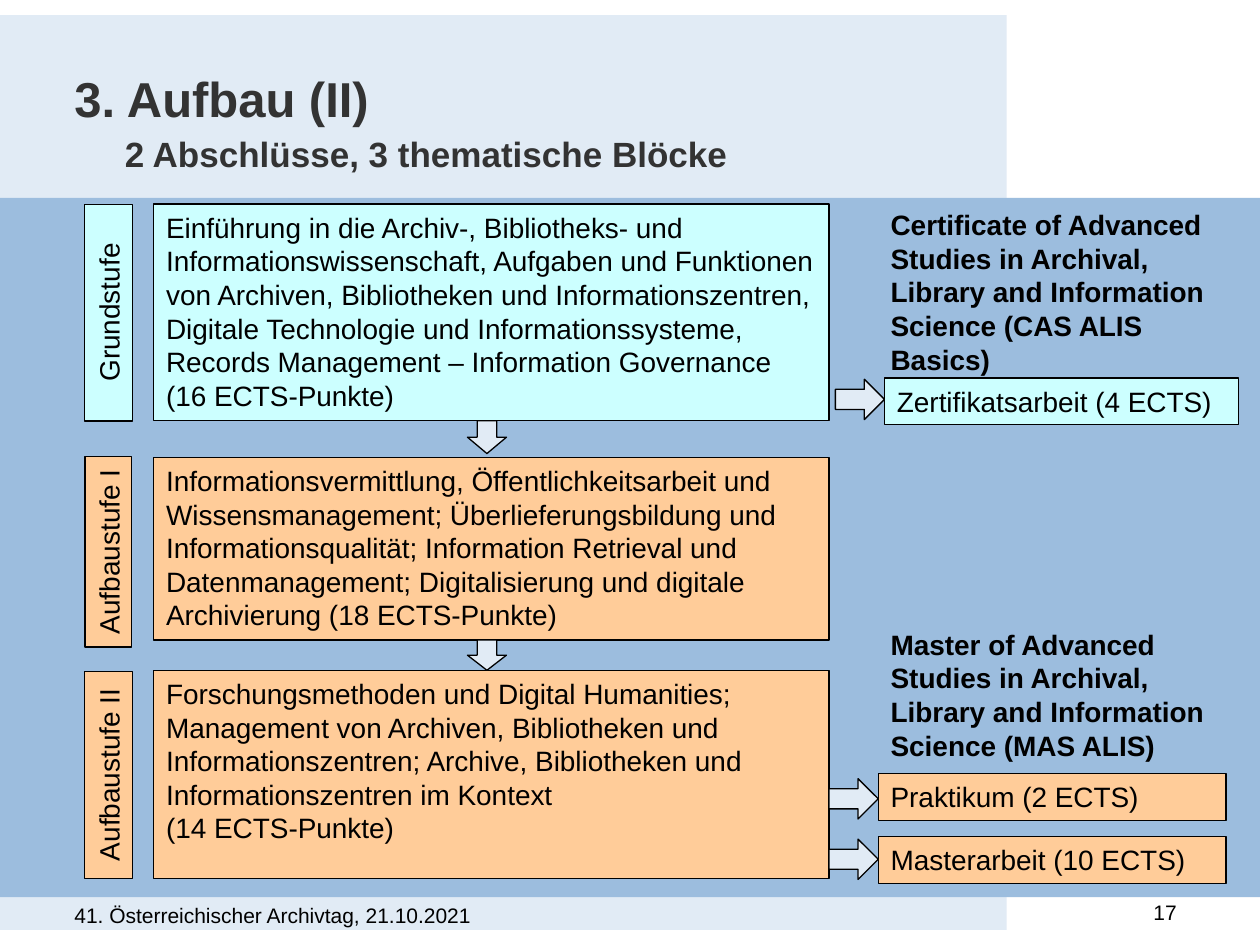
from lxml import etree
from pptx import Presentation
from pptx import util as u
from pptx.dml.color import RGBColor
from pptx.enum import shapes, text

BAND, PANEL = "E1EBF5", "9CBDDE"
BASIC, ADVANCED = "CCFFFF", "FFCC99"
BLACK, TITLE_GREY = "000000", "333333"
INSETS = (0.1, 0.05)
BLOCK_LEFT, BLOCK_WIDTH = 1.22, 5.36
LABEL_CENTRE = 0.86
LEFT, CENTRE, RIGHT = (text.PP_ALIGN.LEFT, text.PP_ALIGN.CENTER,
                       text.PP_ALIGN.RIGHT)

# Fill, label, label centre and size, block top and height, block paragraphs
STAGES = [
    (BASIC, "Grundstufe", 2.48, 1.72, 0.38, 1.62, 1.72, [
        "Einführung in die Archiv-, Bibliotheks- und",
        "Informationswissenschaft, Aufgaben und Funktionen von Archiven, "
        "Bibliotheken und Informationszentren, Digitale Technologie und "
        "Informationssysteme, Records Management – Information Governance",
        "(16 ECTS-Punkte)"]),
    (ADVANCED, "Aufbaustufe I", 4.38, 1.51, 0.37, 3.63, 1.45, [
        "Informationsvermittlung, Öffentlichkeitsarbeit und Wissensmanagement; "
        "Überlieferungsbildung und Informationsqualität; "
        "Information Retrieval und",
        "Datenmanagement; Digitalisierung und digitale Archivierung "
        "(18 ECTS-Punkte)"]),
    (ADVANCED, "Aufbaustufe II", 6.15, 1.64, 0.38, 5.32, 1.65, [
        "Forschungsmethoden und Digital Humanities; Management von Archiven, "
        "Bibliotheken und Informationszentren; Archive, Bibliotheken und "
        "Informationszentren im Kontext",
        "(14 ECTS-Punkte)"]),
]

# Top, height, text
DEGREES = [
    (1.6, 1.72, "Certificate of Advanced Studies in Archival, Library and "
                "Information Science (CAS ALIS Basics)"),
    (4.93, 1.18, "Master of Advanced Studies in Archival, Library and "
                 "Information Science (MAS ALIS)"),
]

# Left, top, width, fill, text
WORKS = [
    (7.02, 3, 2.81, BASIC, "Zertifikatsarbeit (4 ECTS)"),
    (6.97, 6.14, 2.76, ADVANCED, "Praktikum (2 ECTS)"),
    (6.97, 6.64, 2.76, ADVANCED, "Masterarbeit (10 ECTS)"),
]

DOWN, ACROSS = shapes.MSO_SHAPE.DOWN_ARROW, shapes.MSO_SHAPE.RIGHT_ARROW
ARROWS = [
    (DOWN, (3.71, 3.34, 0.31, 0.26)),
    (DOWN, (3.71, 5.08, 0.31, 0.24)),
    (ACROSS, (6.63, 3.01, 0.39, 0.32)),
    (ACROSS, (6.58, 6.18, 0.39, 0.32)),
    (ACROSS, (6.58, 6.66, 0.39, 0.32)),
]


def colour(value):
    return RGBColor.from_string(value)


def apply(target, values):
    for name, value in values.items():
        setattr(target, name, value)


def place(shape, box):
    names = ("left", "top", "width", "height")
    apply(shape, dict(zip(names, map(u.Inches, box))))


def write(shape, paragraphs, size=16, bold=False, ink=BLACK, align=LEFT,
          insets=INSETS, anchor=text.MSO_ANCHOR.TOP):
    """Fill a shape with paragraphs that share one format."""
    frame = shape.text_frame
    side, edge = map(u.Inches, insets)
    apply(frame, dict(word_wrap=True, auto_size=text.MSO_AUTO_SIZE.NONE,
                      vertical_anchor=anchor, margin_left=side,
                      margin_right=side, margin_top=edge, margin_bottom=edge))
    frame.text = "\n".join(paragraphs)
    for paragraph in frame.paragraphs:
        paragraph.alignment = align
        for run in paragraph.runs:
            apply(run.font, dict(name="Arial", size=u.Pt(size), bold=bold))
            run.font.color.rgb = colour(ink)


def add_panel(slide, box, fill, kind=shapes.MSO_SHAPE.RECTANGLE, outlined=True):
    shape = slide.shapes.add_shape(kind, *map(u.Inches, box))
    shape.shadow.inherit = False
    shape.fill.solid()
    shape.fill.fore_color.rgb = colour(fill)
    if outlined:
        shape.line.color.rgb = colour(BLACK)
        shape.line.width = u.Pt(0.75)
    else:
        shape.line.fill.background()
    return shape


def add_text(slide, box, words, **format_values):
    shape = slide.shapes.add_textbox(*map(u.Inches, box))
    write(shape, [words], **format_values)


def add_label(slide, centre, length, thickness, fill, words):
    """Add a stage label that reads upwards."""
    box = (LABEL_CENTRE - length / 2, centre - thickness / 2, length, thickness)
    label = add_panel(slide, box, fill)
    label.rotation = 270
    write(label, [words], align=CENTRE, anchor=text.MSO_ANCHOR.MIDDLE)


def add_title(slide):
    title = slide.shapes.title
    place(title, (0.59, 0.6, 6.61, 0.9))
    write(title, ["3. Aufbau (II)", "2 Abschlüsse, 3 thematische Blöcke"],
          size=28, bold=True, ink=TITLE_GREY, insets=(0, 0))
    heading, subtitle = title.text_frame.paragraphs
    heading.line_spacing = subtitle.line_spacing = 0.9
    subtitle.space_before = u.Pt(5)
    subtitle.runs[0].font.size = u.Pt(20)
    # Indent the second line
    properties = subtitle.runs[0].font and subtitle._p.get_or_add_pPr()
    properties.set("marL", str(u.Inches(0.4)))
    properties.set("indent", "0")
    # Bring the title in front of the background panels
    slide.shapes.element.append(title.element)


def main():
    presentation = Presentation()
    apply(presentation, dict(slide_width=u.Inches(10),
                             slide_height=u.Inches(7.5)))
    slide = presentation.slides.add_slide(presentation.slide_layouts[5])

    # Background and title
    add_panel(slide, (0, 0.12, 7.99, 7.26), BAND, outlined=False)
    add_panel(slide, (0, 1.57, 10, 5.55), PANEL, outlined=False)
    add_title(slide)

    # Footer
    add_text(slide, (0.59, 7.16, 7.09, 0.21),
             "41. Österreichischer Archivtag, 21.10.2021", size=12,
             insets=(0, 0))
    add_text(slide, (8.95, 7.14, 0.39, 0.22), "17", size=12, align=RIGHT,
             insets=(0, 0))

    # Stages with their contents
    for fill, name, centre, length, thickness, top, height, content in STAGES:
        add_label(slide, centre, length, thickness, fill, name)
        block = add_panel(slide, (BLOCK_LEFT, top, BLOCK_WIDTH, height), fill)
        write(block, content)

    # Degrees and final works
    for top, height, words in DEGREES:
        add_text(slide, (6.97, top, 2.81, height), words, bold=True)
    for left, top, width, fill, words in WORKS:
        write(add_panel(slide, (left, top, width, 0.37), fill), [words])

    # Arrows between the parts
    for kind, box in ARROWS:
        add_panel(slide, box, BAND, kind)

    presentation.save("out.pptx")


if __name__ == "__main__":
    main()
